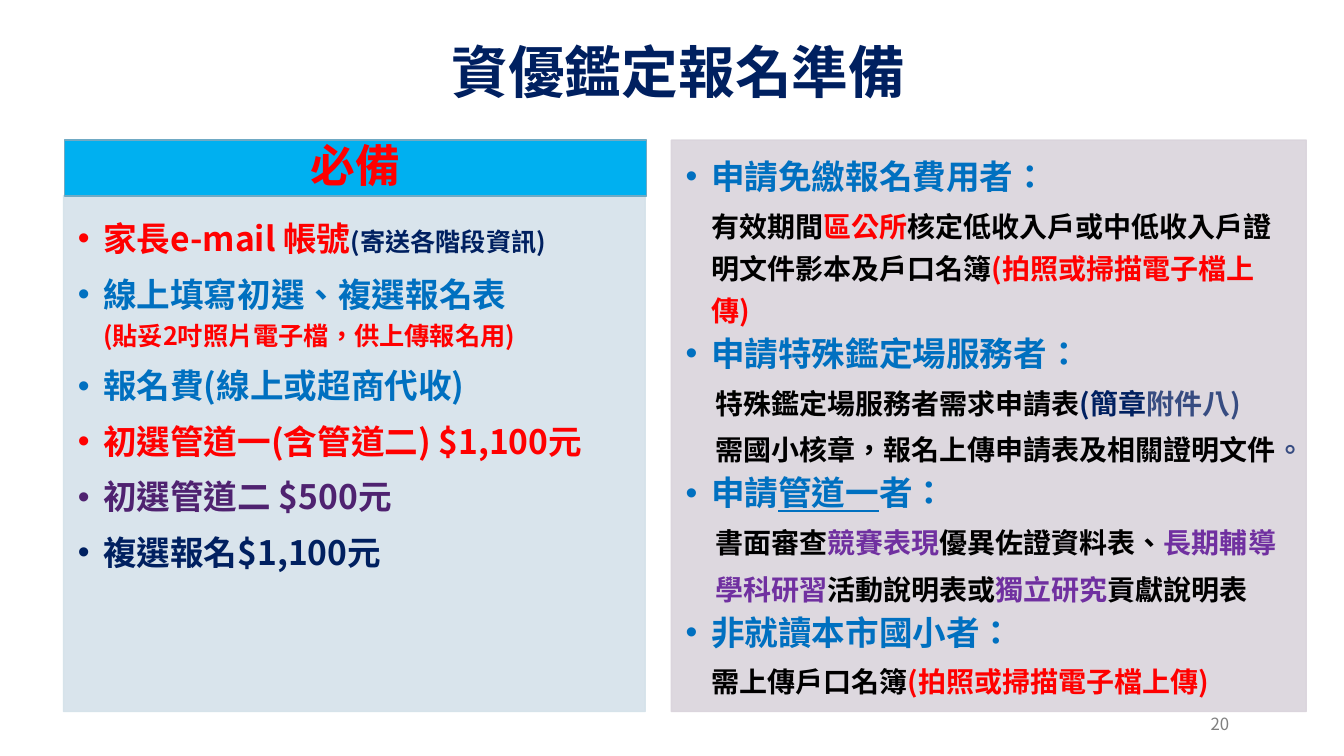
from dataclasses import dataclass
from lxml.etree import SubElement
from pptx import Presentation
from pptx.dml.color import RGBColor as RGB
from pptx.enum.lang import MSO_LANGUAGE_ID as LANG
from pptx.enum.shapes import MSO_SHAPE as SHAPE
from pptx.enum.text import MSO_ANCHOR as ANCHOR, MSO_AUTO_SIZE as FIT, PP_ALIGN as ALIGN
from pptx.oxml.ns import qn
from pptx.util import Cm, Pt


@dataclass(frozen=True)
class Theme:
    face: str = "Noto Sans CJK SC"
    face_tc: str = "Noto Sans CJK TC"
    navy: str = "002060"
    red: str = "FF0000"
    blue: str = "0070C0"
    black: str = "000000"
    plum: str = "4F2270"
    violet: str = "7030A0"
    slate: str = "374C81"
    grey: str = "808080"
    banner: str = "00B0F0"
    banner_edge: str = "70AAC4"
    left_panel: str = "D5E2EA"
    right_panel: str = "DAD4DC"
    title: float = 40.5
    header: float = 32
    item: float = 24
    detail: float = 20
    note: float = 18
    number: float = 12


T = Theme()


def style(font, size, color, face=T.face):
    font.size = Pt(size)
    font.color.rgb = RGB.from_string(color)
    font.name = face
    font.language_id = LANG.TRADITIONAL_CHINESE
    SubElement(font._rPr, qn("a:ea")).set("typeface", face)


def fit_frame(frame, insets, anchor):
    frame.word_wrap = True
    frame.auto_size = FIT.NONE
    frame.vertical_anchor = anchor
    frame.margin_left, frame.margin_top, frame.margin_right, frame.margin_bottom = map(Cm, insets)


deck = Presentation()
deck.slide_width, deck.slide_height = Cm(33.87), Cm(19.05)
slide = deck.slides.add_slide(deck.slide_layouts[3])
title, required, special = slide.placeholders
header = slide.shapes.add_shape(SHAPE.RECTANGLE, Cm(1.63), Cm(3.53), Cm(14.66), Cm(1.41))
header.shadow.inherit = False
header.fill.solid()
header.fill.fore_color.rgb = RGB.from_string(T.banner)
header.line.color.rgb = RGB.from_string(T.banner_edge)
header.line.width = Pt(1)
title.left, title.top, title.width, title.height = Cm(1.44), Cm(0.23), Cm(31.32), Cm(2.54)
number = slide.shapes.add_textbox(Cm(28.24), Cm(17.78), Cm(3.07), Cm(0.89))

labels = [
    (title, "資優鑑定報名準備", T.title, T.navy, T.face, True, ALIGN.CENTER, ANCHOR.BOTTOM, 0.9, (0.18, 0.1, 0.18, 0.1)),
    (header, "必備", T.header, T.red, T.face, True, ALIGN.CENTER, ANCHOR.MIDDLE, 0.9, (0.64, 0.36, 0.64, 0.36)),
    (number, "20", T.number, T.grey, T.face_tc, False, ALIGN.RIGHT, ANCHOR.BOTTOM, 1.0, (0.33, 0.18, 0.33, 0.18)),
]
for label, words, size, color, face, bold, align, anchor, spacing, insets in labels:
    fit_frame(label.text_frame, insets, anchor)
    line = label.text_frame.paragraphs[0]
    line.add_run().text = words
    line.alignment = align
    line.line_spacing = spacing
    line.font.bold = bold
    style(line.font, size, color, face)

BULLET, HANGING, FIRST_LINE = (0.64, -0.64, "•"), (0.64, 0, None), (0, 0.74, None)
required_items = [
    (BULLET, T.item, [("家長e-mail 帳號", T.red), ("(寄送各階段資訊)", T.navy, T.note)]),
    (BULLET, T.item, [("線上填寫初選、複選報名表", T.blue), "break",
                      ("(貼妥2吋照片電子檔，供上傳報名用)", T.red, T.note)]),
    (BULLET, T.item, [("報名費(線上或超商代收)", T.blue)]),
    (BULLET, T.item, [("初選管道一(含管道二) $1,100元", T.red)]),
    (BULLET, T.item, [("初選管道二 $500元", T.plum)]),
    (BULLET, T.item, [("複選報名$1,100元", T.navy)]),
]
special_items = [
    (BULLET, T.item, [("申請免繳報名費用者", T.blue), ("：", T.blue)]),
    (HANGING, T.detail, [("有效期間", T.black), ("區公所", T.red),
                         ("核定低收入戶或中低收入戶證明文件影本及戶口名簿", T.black),
                         ("(拍照或掃描電子檔上傳)", T.red)]),
    (BULLET, T.item, [("申請特殊鑑定場服務者", T.blue), ("：", T.blue)]),
    (FIRST_LINE, T.detail, [("特殊鑑定場服務者需求申請表", T.black), ("(簡章", T.navy), ("附件八)", T.slate)]),
    (FIRST_LINE, T.detail, [("需國小核章，報名上傳申請表及相關證明文件", T.black), ("。", T.slate)]),
    (BULLET, T.item, [("申請", T.blue), ("管道一", T.blue, T.item, True), ("者", T.blue), ("：", T.blue)]),
    (FIRST_LINE, T.detail, [("書面審查", T.black), ("競賽表現", T.violet),
                            ("優異佐證資料表、", T.black), ("長期輔導", T.violet)]),
    (FIRST_LINE, T.detail, [("學科研習", T.violet), ("活動說明表或", T.black),
                            ("獨立研究", T.violet), ("貢獻說明表", T.black)]),
    (BULLET, T.item, [("非就讀本市國小者", T.blue), ("：", T.blue)]),
    (HANGING, T.detail, [("需上傳戶口名簿", T.black), ("(拍照或掃描電子檔上傳)", T.red)]),
]
panels = [
    (required, (1.6, 4.93, 14.66, 13), T.left_panel, required_items, 1.2, 5.1),
    (special, (16.92, 3.53, 16, 14.4), T.right_panel, special_items, Pt(30), 3.2),
]
for panel, place, tint, items, spacing, gap in panels:
    panel.left, panel.top, panel.width, panel.height = map(Cm, place)
    panel.fill.solid()
    panel.fill.fore_color.rgb = RGB.from_string(tint)
    panel.line.color.rgb = RGB.from_string(tint)
    panel.line.width = Pt(1)
    for tint_color in panel._element.spPr.iter(qn("a:srgbClr")):
        SubElement(tint_color, qn("a:alpha")).set("val", "90000")
    frame = panel.text_frame
    fit_frame(frame, (0.36, 0.36, 0.48, 0.53), ANCHOR.TOP)
    for index, ((margin, indent, bullet), size, pieces) in enumerate(items):
        item = frame.add_paragraph() if index else frame.paragraphs[0]
        item.line_spacing = spacing
        item.space_before, item.space_after = Pt(0), Pt(gap)
        layout = item._p.get_or_add_pPr()
        layout.set("marL", str(Cm(margin)))
        layout.set("indent", str(Cm(indent)))
        if bullet:
            SubElement(layout, qn("a:buFont")).set("typeface", "Arial")
            SubElement(layout, qn("a:buChar")).set("char", bullet)
        else:
            SubElement(layout, qn("a:buNone"))
        item.font.bold = True
        style(item.font, size, pieces[0][1])
        for piece in pieces:
            if piece == "break":
                item.add_line_break()
                continue
            words, color, *extra = piece
            run = item.add_run()
            run.text = words
            if piece is not pieces[0]:
                style(run.font, extra[0] if extra else size, color, T.face_tc if words == "：" else T.face)
            if len(extra) > 1:
                run.font.underline = True

deck.save("out.pptx")
